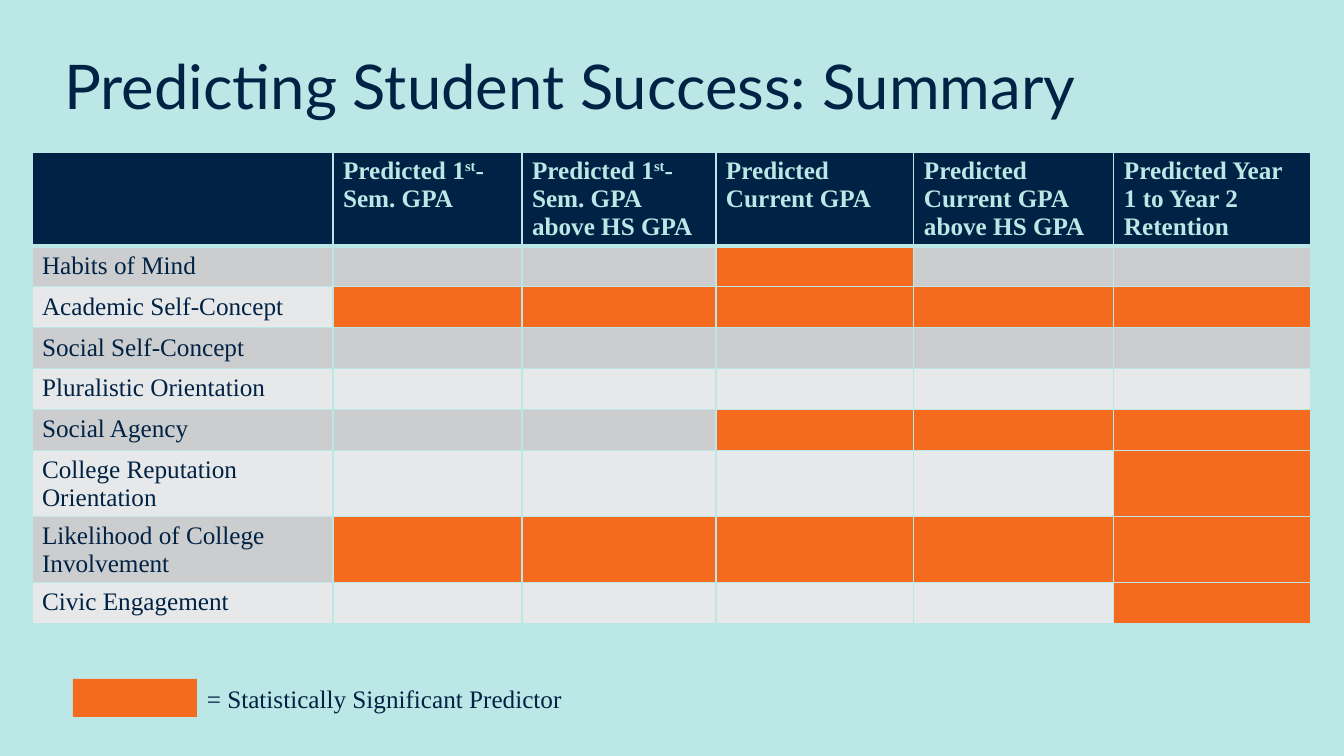
from lxml import etree
from pptx import Presentation
from pptx.dml.color import RGBColor
from pptx.enum.shapes import MSO_SHAPE
from pptx.enum.text import MSO_ANCHOR, MSO_AUTO_SIZE, PP_ALIGN
from pptx.oxml.ns import qn
from pptx.util import Emu, Pt

RECTANGLE = MSO_SHAPE.RECTANGLE
TOP, MIDDLE = MSO_ANCHOR.TOP, MSO_ANCHOR.MIDDLE
NO_AUTOFIT, FIT_SHAPE = MSO_AUTO_SIZE.NONE, MSO_AUTO_SIZE.SHAPE_TO_FIT_TEXT
LEFT = PP_ALIGN.LEFT
TITLE_ONLY = 5

NAVY, AQUA, ORANGE = "002244", "BBE7E6", "F46A1F"
BANDS = ("CCCDCF", "E7E8E9")
COLUMN_WIDTHS = (301, 189, 194, 198, 200, 197)
ROW_HEIGHT = 41
HEADERS = (
    "",
    "Predicted 1^st^-Sem. GPA",
    "Predicted 1^st^-Sem. GPA above HS GPA",
    "Predicted Current GPA",
    "Predicted Current GPA above HS GPA",
    "Predicted Year 1 to Year 2 Retention",
)
PREDICTORS = (
    ("Habits of Mind", {3}, MIDDLE),
    ("Academic Self-Concept", {1, 2, 3, 4, 5}, MIDDLE),
    ("Social Self-Concept", set(), MIDDLE),
    ("Pluralistic Orientation", set(), TOP),
    ("Social Agency", {3, 4, 5}, TOP),
    ("College Reputation Orientation", {5}, TOP),
    ("Likelihood of College Involvement", {1, 2, 3, 4, 5}, TOP),
    ("Civic Engagement", {5}, TOP),
)


def px(length):
    return Emu(round(length * 914400 / 100.8))


def color(value):
    return RGBColor.from_string(value)


def write(frame, text, size=18, font="Times New Roman", ink=NAVY, bold=False, spacing=None):
    paragraph = frame.paragraphs[0]
    paragraph.alignment = LEFT
    paragraph.line_spacing = spacing
    for index, piece in enumerate(text.split("^")):
        run = paragraph.add_run()
        run.text = piece
        run.font.size = Pt(size)
        run.font.name = font
        run.font.bold = bold
        run.font.color.rgb = color(ink)
        if index % 2:
            run.font._element.set("baseline", "30000")


class SlideBuilder:
    """Adds styled elements to one title-only slide."""

    def __init__(self, presentation):
        self.slide = presentation.slides.add_slide(presentation.slide_layouts[TITLE_ONLY])
        background = self.slide.background.fill
        background.solid()
        background.fore_color.rgb = color(AQUA)

    def title(self, text, left, top, width, height):
        shape = self.slide.shapes.title
        shape.left, shape.top = px(left), px(top)
        shape.width, shape.height = px(width), px(height)
        frame = shape.text_frame
        frame.auto_size = NO_AUTOFIT
        frame.vertical_anchor = MIDDLE
        write(frame, text, size=44, font="Lato", spacing=0.9)

    def rectangle(self, left, top, width, height, fill):
        shape = self.slide.shapes.add_shape(RECTANGLE, px(left), px(top), px(width), px(height))
        shape.shadow.inherit = False
        shape.fill.solid()
        shape.fill.fore_color.rgb = color(fill)
        shape.line.fill.background()

    def text(self, text, left, top, width, height):
        frame = self.slide.shapes.add_textbox(px(left), px(top), px(width), px(height)).text_frame
        frame.word_wrap = True
        frame.auto_size = FIT_SHAPE
        write(frame, text)

    def cell(self, cell, text, fill, anchor=TOP, top=1, bottom=1, **style):
        properties = cell._tc.get_or_add_tcPr()
        for side, width in (("L", 1), ("R", 1), ("T", top), ("B", bottom)):
            line = etree.SubElement(properties, qn(f"a:ln{side}"), w=str(int(Pt(width))))
            solid = etree.SubElement(line, qn("a:solidFill"))
            etree.SubElement(solid, qn("a:srgbClr"), val=AQUA)
        cell.fill.solid()
        cell.fill.fore_color.rgb = color(fill)
        cell.vertical_anchor = anchor
        if text:
            write(cell.text_frame, text, **style)

    def table(self, left, top):
        row_count = len(PREDICTORS) + 1
        table = self.slide.shapes.add_table(
            row_count, len(HEADERS), px(left), px(top),
            px(sum(COLUMN_WIDTHS)), px(row_count * ROW_HEIGHT),
        ).table
        table.first_row = table.horz_banding = False
        for column, width in zip(table.columns, COLUMN_WIDTHS):
            column.width = px(width)
        for index, header in enumerate(HEADERS):
            self.cell(table.cell(0, index), header, NAVY, bottom=3, ink=AQUA, bold=True)
        for row, (name, significant, anchor) in enumerate(PREDICTORS, 1):
            band = BANDS[(row - 1) % 2]
            for index in range(len(HEADERS)):
                self.cell(
                    table.cell(row, index),
                    "" if index else name,
                    ORANGE if index in significant else band,
                    anchor=TOP if index else anchor,
                    top=3 if row == 1 else 1,
                )


def main():
    presentation = Presentation()
    presentation.slide_width, presentation.slide_height = px(1344), px(756)
    builder = SlideBuilder(presentation)
    builder.title("Predicting Student Success: Summary", 54, 17, 1159, 146)
    builder.table(32, 152)
    builder.rectangle(73, 679, 124, 38, ORANGE)
    builder.text("= Statistically Significant Predictor", 197, 678, 496, 40)
    presentation.save("out.pptx")


if __name__ == "__main__":
    main()
